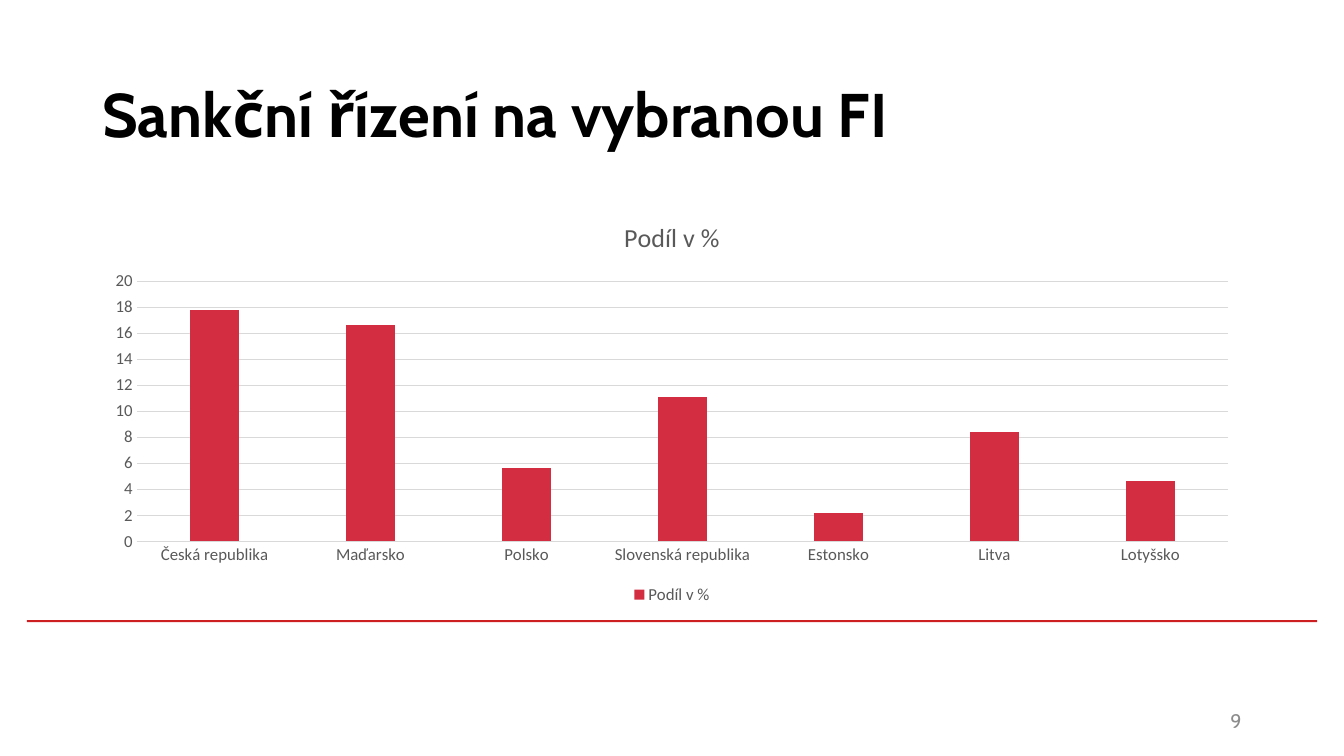
"""Build the slide on sanction proceedings with its column chart."""
from dataclasses import dataclass

import pptx
import pptx.chart.data
import pptx.dml.color
import pptx.enum.chart
import pptx.enum.shapes
import pptx.enum.text
import pptx.util

Pt = pptx.util.Pt
Align = pptx.enum.text.PP_ALIGN


@dataclass(frozen=True)
class Theme:
    heading_font: str = "Cabin"
    chart_font: str = "Calibri"
    ink: str = "000000"
    chart_ink: str = "595959"
    page_ink: str = "8C8C8C"
    grid: str = "D9D9D9"
    rule: str = "CD1F21"
    column: str = "D22D40"
    heading_size: float = 44
    page_size: float = 14
    chart_title_size: float = 18.6
    label_size: float = 12
    grid_width: float = 0.75


@dataclass(frozen=True)
class Box:
    left: float
    top: float
    width: float
    height: float

    def lengths(self) -> tuple:
        return Pt(self.left), Pt(self.top), Pt(self.width), Pt(self.height)


@dataclass(frozen=True)
class Label:
    text: str
    box: Box
    size: float
    color: str
    bold: bool = False
    align: Align = Align.LEFT


THEME = Theme()
SERIES_NAME = "Podíl v %"
SHARES = {
    "Česká republika": 17.8,
    "Maďarsko": 16.6,
    "Polsko": 5.6,
    "Slovenská republika": 11.1,
    "Estonsko": 2.2,
    "Litva": 8.4,
    "Lotyšsko": 4.6,
}
LABELS = (
    Label("Sankční řízení na vybranou FI", Box(66, 28.75, 828, 104.4),
          THEME.heading_size, THEME.ink, bold=True),
    Label("9", Box(678, 500.5, 216, 28.75),
          THEME.page_size, THEME.page_ink, align=Align.RIGHT),
)
RULE_BOX = Box(19.3, 442.9, 921.6, 1.6)
CHART_BOX = Box(66, 143.75, 828, 291)


def rgb(value: str) -> pptx.dml.color.RGBColor:
    return pptx.dml.color.RGBColor.from_string(value)


def style_font(font, *, name: str, size: float, color: str, bold: bool = False) -> None:
    font.name = name
    font.size = Pt(size)
    font.bold = bold
    font.color.rgb = rgb(color)


def write_text(frame, text: str, *, align: Align = Align.LEFT, **font_format) -> None:
    paragraph = frame.paragraphs[0]
    paragraph.alignment = align
    run = paragraph.add_run()
    run.text = text
    style_font(run.font, **font_format)


def draw_label(slide, label: Label) -> None:
    frame = slide.shapes.add_textbox(*label.box.lengths()).text_frame
    frame.word_wrap = True
    frame.vertical_anchor = pptx.enum.text.MSO_ANCHOR.MIDDLE
    write_text(frame, label.text, align=label.align, name=THEME.heading_font,
               size=label.size, color=label.color, bold=label.bold)


def draw_rule(slide) -> None:
    rule = slide.shapes.add_shape(
        pptx.enum.shapes.MSO_SHAPE.RECTANGLE, *RULE_BOX.lengths())
    rule.shadow.inherit = False
    rule.fill.solid()
    rule.fill.fore_color.rgb = rgb(THEME.rule)
    rule.line.fill.background()


def style_grid_line(line) -> None:
    line.color.rgb = rgb(THEME.grid)
    line.width = Pt(THEME.grid_width)


def draw_chart(slide) -> None:
    data = pptx.chart.data.CategoryChartData()
    data.categories = list(SHARES)
    data.add_series(SERIES_NAME, list(SHARES.values()))
    chart = slide.shapes.add_chart(
        pptx.enum.chart.XL_CHART_TYPE.COLUMN_CLUSTERED,
        *CHART_BOX.lengths(), data).chart
    label_format = {"name": THEME.chart_font, "size": THEME.label_size,
                    "color": THEME.chart_ink}
    style_font(chart.font, **label_format)

    chart.has_title = True
    write_text(chart.chart_title.text_frame, SERIES_NAME, align=Align.CENTER,
               **{**label_format, "size": THEME.chart_title_size})
    chart.chart_title.include_in_layout = False

    chart.has_legend = True
    chart.legend.position = pptx.enum.chart.XL_LEGEND_POSITION.BOTTOM
    chart.legend.include_in_layout = False
    style_font(chart.legend.font, **label_format)

    for axis in (chart.category_axis, chart.value_axis):
        axis.major_tick_mark = pptx.enum.chart.XL_TICK_MARK.NONE
        axis.minor_tick_mark = pptx.enum.chart.XL_TICK_MARK.NONE
        style_font(axis.tick_labels.font, **label_format)
    style_grid_line(chart.category_axis.format.line)
    shares_axis = chart.value_axis
    shares_axis.minimum_scale = 0
    shares_axis.maximum_scale = 20
    shares_axis.major_unit = 2
    shares_axis.format.line.fill.background()
    shares_axis.has_major_gridlines = True
    style_grid_line(shares_axis.major_gridlines.format.line)

    columns = chart.plots[0]
    columns.vary_by_categories = False
    columns.gap_width = 219
    columns.overlap = -27
    fill = columns.series[0].format.fill
    fill.solid()
    fill.fore_color.rgb = rgb(THEME.column)


def main() -> None:
    deck = pptx.Presentation()
    deck.slide_width = Pt(960)
    deck.slide_height = Pt(540)
    slide = deck.slides.add_slide(deck.slide_layouts[6])
    draw_rule(slide)
    draw_chart(slide)
    for label in LABELS:
        draw_label(slide, label)
    deck.save("out.pptx")


if __name__ == "__main__":
    main()
